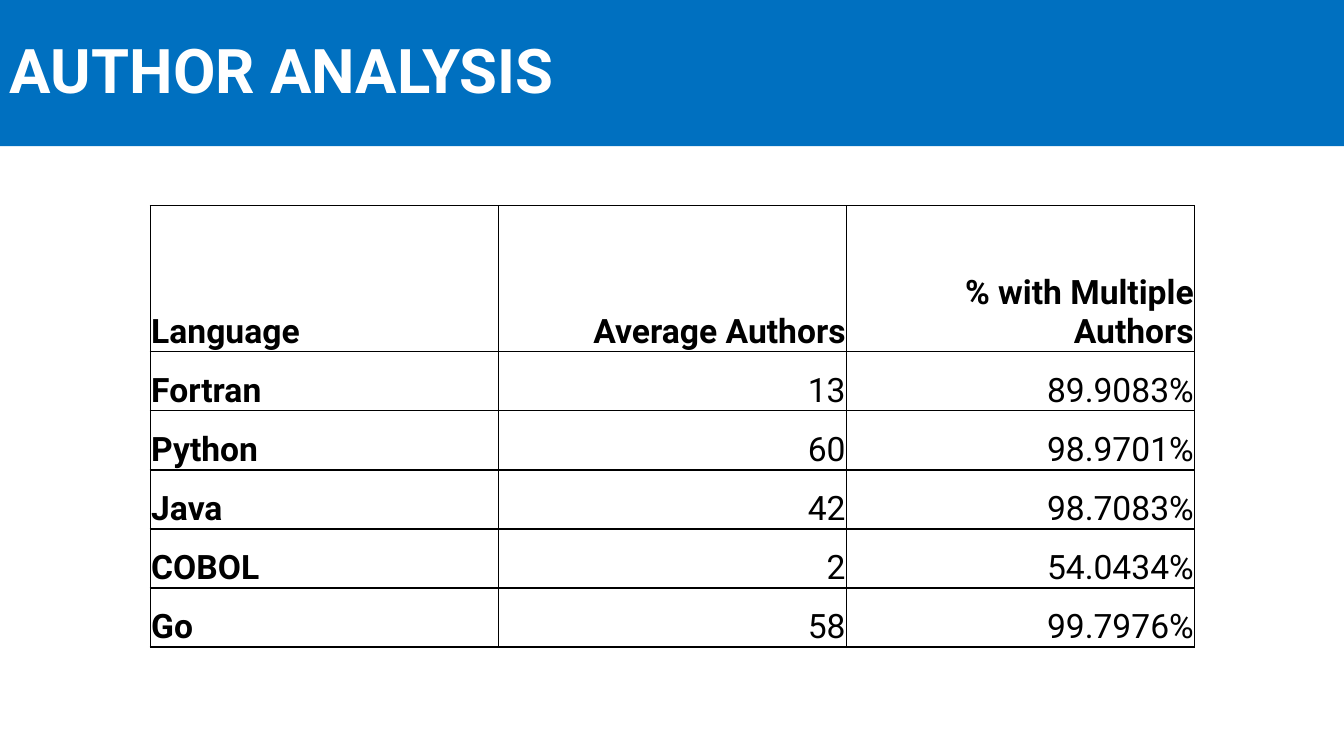
from lxml.etree import SubElement as Sub
from pptx import Presentation
from pptx.dml.color import RGBColor as RGB
from pptx.enum.shapes import MSO_SHAPE as Shape
from pptx.enum.text import MSO_ANCHOR as Anchor, PP_ALIGN as Align
from pptx.oxml.ns import qn
from pptx.util import Inches, Pt

BLUE, WHITE, BLACK = "0070C0", "FFFFFF", "000000"

ROWS = [
    ("Language", "Average Authors", "% with Multiple Authors"),
    ("Fortran", "13", "89.9083%"),
    ("Python", "60", "98.9701%"),
    ("Java", "42", "98.7083%"),
    ("COBOL", "2", "54.0434%"),
    ("Go", "58", "99.7976%"),
]


def color(code):
    return RGB.from_string(code)


def outline(cell, code, width):
    """Draw a solid border on all four sides of a table cell."""
    props = cell._tc.get_or_add_tcPr()
    for side in ("lnL", "lnR", "lnT", "lnB"):
        line = Sub(props, qn(f"a:{side}"), w=str(Pt(width)))
        fill = Sub(line, qn("a:solidFill"))
        Sub(fill, qn("a:srgbClr"), val=code)


class Deck:
    face = "Roboto"

    def __init__(self, wide, high):
        self.show = Presentation()
        self.show.slide_width = Inches(wide)
        self.show.slide_height = Inches(high)
        self.slide = self.show.slides.add_slide(self.show.slide_layouts[6])

    def label(self, frame, text, size, code, bold, align=Align.LEFT):
        """Fill a text frame with one styled paragraph and return it."""
        frame.word_wrap = True
        para = frame.paragraphs[0]
        para.text = text
        para.alignment = align
        font = para.font
        font.name, font.size, font.bold = self.face, Pt(size), bold
        font.color.rgb = color(code)
        return para

    def banner(self, text, box):
        bar = self.slide.shapes.add_shape(Shape.RECTANGLE, *map(Inches, box))
        bar.shadow.inherit = False
        bar.fill.solid()
        bar.fill.fore_color.rgb = color(BLUE)
        bar.line.fill.background()
        bar.text_frame.vertical_anchor = Anchor.MIDDLE
        para = self.label(bar.text_frame, text, 44, WHITE, True)
        para.line_spacing = 0.9

    def table(self, rows, box, head):
        """Add a ruled table with a head row of given height, the rest equal."""
        left, top, width, height = map(Inches, box)
        grid = self.slide.shapes.add_table(
            len(rows), len(rows[0]), left, top, width, height).table
        grid.first_row = grid.horz_banding = False
        rest = (height - Inches(head)) // (len(rows) - 1)
        for r, row in enumerate(rows):
            grid.rows[r].height = rest if r else Inches(head)
            for c, text in enumerate(row):
                self.cell(grid.cell(r, c), text, r == 0 or c == 0,
                          Align.RIGHT if c else Align.LEFT)

    def cell(self, cell, text, bold, align):
        cell.margin_left = cell.margin_right = cell.margin_top = Inches(0.01)
        cell.margin_bottom = 0
        cell.vertical_anchor = Anchor.BOTTOM
        outline(cell, BLACK, 1)
        cell.fill.background()
        self.label(cell.text_frame, text, 24, BLACK, bold, align)


def main():
    deck = Deck(13.33, 7.5)
    deck.banner("AUTHOR ANALYSIS", (0, 0, 13.33, 1.45))
    deck.table(ROWS, (1.49, 2.04, 10.36, 4.38), 1.45)
    deck.show.save("out.pptx")


if __name__ == "__main__":
    main()
